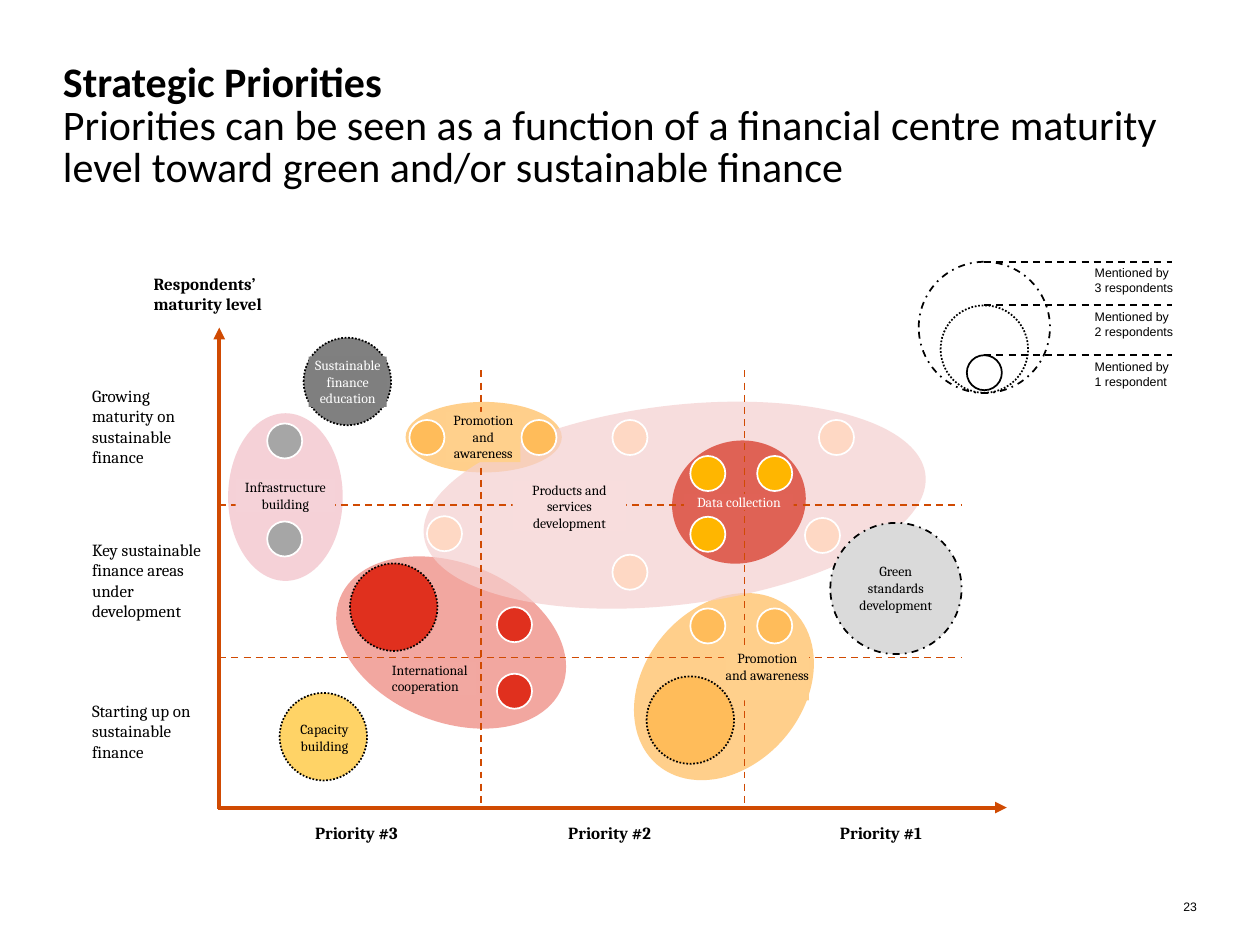
from pptx import Presentation
from pptx.dml.color import RGBColor
from pptx.enum.dml import MSO_LINE
from pptx.enum.shapes import MSO_CONNECTOR, MSO_SHAPE
from pptx.enum.text import MSO_ANCHOR, PP_ALIGN
from pptx.oxml.ns import qn
from pptx.util import Pt
from lxml.etree import SubElement

SMALL, MEDIUM, LARGE = 20, 50, 75
ORANGE = "D04A02"
LEGEND = [
    (203, SMALL, None, "Mentioned by 1 respondent"),
    (174.5, MEDIUM, MSO_LINE.ROUND_DOT, "Mentioned by 2 respondents"),
    (149.6, LARGE, MSO_LINE.DASH_DOT, "Mentioned by 3 respondents"),
]
ZONES = [
    (115.2, 251.3, 95.8, 65.5, 90, "E998A6", 44),
    (231.8, 229.7, 89.3, 40.3, 0, "FFBC5A", 70),
    (189.4, 321.8, 136.8, 90.7, 21.9, "ED8278", 70),
    (355, 347, 117.4, 90.7, 310.5, "FFBC5A", 70),
    (241.2, 231.8, 288.7, 113.8, 353, "F5CFCF", 70),
    (383.8, 252, 77, 69.8, 343.1, "D62E1C", 70),
]
MATURITY_LEVELS = [
    (220.3, 46.8, "Growing maturity on sustainable finance"),
    (308.2, 46.8, "Key sustainable finance areas under development"),
    (400.3, 35.3, "Starting up on sustainable finance"),
]
PRIORITIES = [(180, "Priority #3"), (324.7, "Priority #2"), (480, "Priority #1")]
RESPONDENTS = {
    "FED8C4": [(360, 327), (470, 306), (254, 305), (360, 250), (478, 250)],
    "FFBC5A": [(404.5, 357.7), (442.7, 357.7), (308, 250), (244, 250)],
    "E0301E": [(294, 357), (294, 395)],
    "FFB600": [(404.5, 270.6), (442.7, 270.6), (404.5, 305.3)],
    "A6A6A6": [(162.7, 252), (162.7, 308)],
}
GROUPS = [
    (184.8, 421, MEDIUM, "FFD366"),
    (225, 347, MEDIUM, "E0301E"),
    (198.5, 218, MEDIUM, "808080"),
    (512, 336.3, LARGE, "DADADA"),
]
TAGS = [
    (293, 275, 64.8, 28.8, "F8DDDD", "Products and services development"),
    (224, 378, 48.2, 19.4, "F2A8A1", "International cooperation"),
    (486.7, 321.8, 50.4, 28.8, "DADADA", "Green standards development"),
    (414.7, 371.5, 47.5, 28.8, "FFD08C", "Promotion and awareness"),
    (391, 282.2, 62.6, 9.4, "E06256", "Data collection"),
    (169.2, 411.8, 32.4, 19.4, "FFD366", "Capacity building"),
    (254.9, 235.4, 42.5, 28.8, "FFD08C", "Promotion and awareness"),
    (176.4, 203.8, 44.6, 28.8, "7F7F7F", "Sustainable finance education"),
    (134.6, 273.6, 56.9, 19.4, "F5D2D8", "Infrastructure building"),
]


def color(value):
    """Turn a hex string into a colour."""
    return RGBColor.from_string(value)


def write(shape, text, size, font="Cambria", ink="000000", bold=False,
          align=PP_ALIGN.LEFT, inset=(0, 0), anchor=MSO_ANCHOR.TOP):
    """Put one wrapped paragraph into a shape and return it."""
    frame = shape.text_frame
    frame.word_wrap = True
    frame.vertical_anchor = anchor
    frame.margin_left = frame.margin_right = Pt(inset[0])
    frame.margin_top = frame.margin_bottom = Pt(inset[1])
    para = frame.paragraphs[0]
    para.text = text
    para.alignment = align
    para.font.size = Pt(size)
    para.font.name = font
    para.font.bold = bold
    para.font.color.rgb = color(ink)
    return para


def add_text(page, left, top, width, height, text, size, **style):
    """Add a text box and return its paragraph."""
    box = page.shapes.add_textbox(Pt(left), Pt(top), Pt(width), Pt(height))
    return write(box, text, size, **style)


def add_filled(page, preset, left, top, width, height, fill=None):
    """Add a preset shape without outline or shadow."""
    shape = page.shapes.add_shape(preset, Pt(left), Pt(top), Pt(width), Pt(height))
    shape.shadow.inherit = False
    shape.line.fill.background()
    if fill:
        shape.fill.solid()
        shape.fill.fore_color.rgb = color(fill)
    else:
        shape.fill.background()
    return shape


def add_circle(page, center_x, center_y, size, fill=None, ink="000000", dash=None):
    """Add an outlined circle around a centre."""
    circle = add_filled(page, MSO_SHAPE.OVAL, center_x - size / 2,
                        center_y - size / 2, size, size, fill)
    circle.line.color.rgb = color(ink)
    circle.line.width = Pt(1)
    if dash:
        circle.line.dash_style = dash


def add_group(page, center_x, center_y, size, fill):
    """Add a circle whose dash pattern tells how many respondents it stands for."""
    dash = MSO_LINE.DASH_DOT if size == LARGE else MSO_LINE.ROUND_DOT
    add_circle(page, center_x, center_y, size, fill, dash=dash)


def add_zone(page, left, top, width, height, rotation, fill, opacity):
    """Add a translucent, turned ellipse."""
    zone = add_filled(page, MSO_SHAPE.OVAL, left, top, width, height, fill)
    zone.rotation = rotation
    value = zone.fill._xPr.find(qn("a:solidFill"))[0]
    SubElement(value, qn("a:alpha"), val=str(opacity * 1000))
    return zone


def add_line(page, start, end, ink, width=1, arrow=False):
    """Add a dashed guide, or a solid axis with an arrowhead."""
    line = page.shapes.add_connector(MSO_CONNECTOR.STRAIGHT, *map(Pt, start + end))
    line.line.color.rgb = color(ink)
    line.line.width = Pt(width)
    if arrow:
        SubElement(line.line._get_or_add_ln(), qn("a:tailEnd"), type="triangle")
    else:
        line.line.dash_style = MSO_LINE.DASH
    SubElement(line._element.spPr, qn("a:effectLst"))


def add_title(page):
    """Add the two-part heading."""
    para = add_text(page, 36, 36, 648, 108, "Strategic Priorities", 24, font="Calibri")
    para.line_spacing = 0.85
    para.runs[0].font.bold = True
    para.add_line_break()
    span = para.add_run()
    span.text = ("Priorities can be seen as a function of a financial centre "
                 "maturity level toward green and/or sustainable finance")


def add_legend(page):
    """Add the nested circles that explain the sizes."""
    for top, size, dash, _ in LEGEND:
        add_circle(page, 562.5, top + size / 2, size, dash=dash)
    for top, _, _, label in LEGEND:
        add_line(page, (562.5, top), (669.6, top), "000000")
        add_text(page, 618.5, top - 1.4, 61, 24.5, label, 7.1,
                 font="Arial", inset=(7.2, 3.6))


def add_axes(page):
    """Add both axes, their labels and the dashed guides."""
    add_line(page, (125.3, 462.2), (125.3, 187.2), ORANGE, 2.25, True)
    add_line(page, (124.6, 461.5), (575.3, 461.5), ORANGE, 2.25, True)
    add_text(page, 87.8, 156.2, 74.9, 23.8, "Respondents’ maturity level", 9.7, bold=True)
    for top, height, label in MATURITY_LEVELS:
        add_text(page, 52.6, top, 67.7, height, label, 9.7)
    for left, label in PRIORITIES:
        add_text(page, left, 470.2, 65, 11.5, label, 9.7, bold=True)
    for y in (375.8, 288.7):
        add_line(page, (125.3, y), (550, y), ORANGE)
    for x in (275, 425.5):
        add_line(page, (x, 211.7), (x, 461.5), ORANGE)


def add_tag(page, left, top, width, height, fill, text):
    """Add a small filled label."""
    tag = add_filled(page, MSO_SHAPE.RECTANGLE, left, top, width, height, fill)
    ink = "FFFFFF" if fill in ("E06256", "7F7F7F") else "000000"
    align = PP_ALIGN.LEFT if fill == "F2A8A1" else PP_ALIGN.CENTER
    write(tag, text, 7.9, ink=ink, align=align)


def main():
    """Build the slide and save it."""
    deck = Presentation()
    deck.slide_width, deck.slide_height = Pt(720), Pt(540)
    page = deck.slides.add_slide(deck.slide_layouts[6])
    add_title(page)
    add_legend(page)
    for zone in ZONES:
        add_zone(page, *zone)
    add_axes(page)
    for group in GROUPS:
        add_group(page, *group)
    for fill, centers in RESPONDENTS.items():
        for center in centers:
            add_circle(page, *center, SMALL, fill, "FFFFFF")
    for tag in TAGS:
        add_tag(page, *tag)
    add_group(page, 394.5, 411.5, MEDIUM, "FFBC5A")
    add_text(page, 583.2, 511.2, 100.8, 10.8, "23", 7, font="Arial",
             align=PP_ALIGN.RIGHT, anchor=MSO_ANCHOR.BOTTOM)
    deck.save("out.pptx")


if __name__ == "__main__":
    main()
